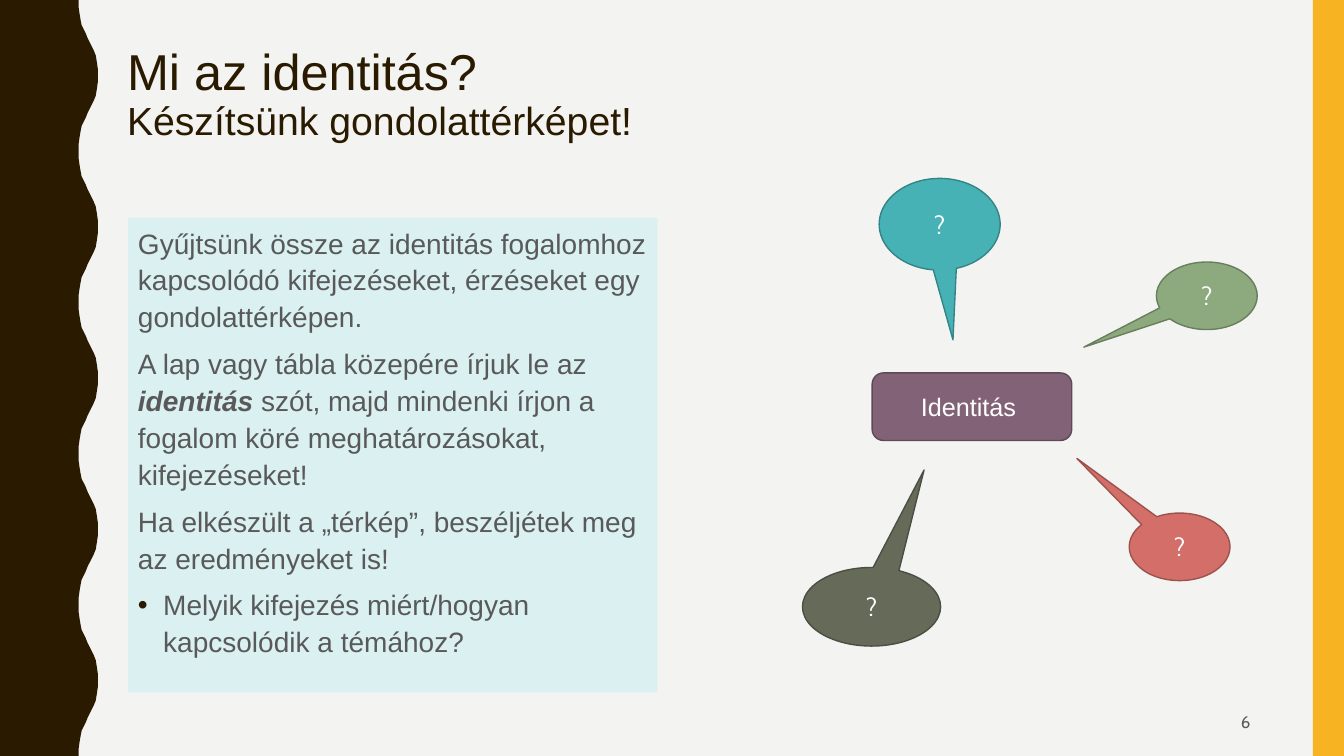
import pptx
import pptx.util
import pptx.dml.color
import pptx.enum.shapes
import pptx.enum.text
import pptx.oxml
import pptx.oxml.ns

PX = 9144
DARK, GREY, WHITE = "2A1A00", "595959", "FFFFFF"
MSO = pptx.enum.shapes.MSO_SHAPE
ALIGN = pptx.enum.text.PP_ALIGN
ANCHOR = pptx.enum.text.MSO_ANCHOR
WAVE_HALF = [(78, 0), (78, 7), (79, 14), (80, 20), (81, 25), (83, 29), (85, 33),
             (87, 38), (89, 42), (91, 46), (93, 50), (95, 55), (96, 61), (97, 68)]
CALLOUTS = [
    ((872, 177, 120, 91), (0.11, 1.26), "46B2B5", "348486"),
    ((1147, 260, 100, 67), (-1.22, 0.76), "8CAA7E", "687E5D"),
    ((796, 563, 137, 78), (0.38, -1.74), "656A59", "4B4E42"),
    ((1120, 509, 100, 67), (-1.02, -1.31), "D36F68", "9C524D"),
]
TASKS = [
    [("Gyűjtsünk össze az identitás fogalomhoz kapcsolódó kifejezéseket, "
      "érzéseket egy gondolattérképen.", False)],
    [("A lap vagy tábla közepére írjuk le az ", False), ("identitás", True),
     (" szót, majd mindenki írjon a fogalom köré meghatározásokat, kifejezéseket!", False)],
    [("Ha elkészült a „térkép”, beszéljétek meg az eredményeket is!", False)],
    [("Melyik kifejezés miért/hogyan kapcsolódik a témához?", False)],
]


def rgb(color):
    return pptx.dml.color.RGBColor.from_string(color)


def box(*lengths):
    return [n * PX for n in lengths]


def set_font(font, name, size, color):
    font.name = name
    font.size = pptx.util.Pt(size)
    font.color.rgb = rgb(color)


def paint(sp, fill, line=None):
    sp.shadow.inherit = False
    sp.fill.solid()
    sp.fill.fore_color.rgb = rgb(fill)
    if line:
        sp.line.color.rgb = rgb(line)
        sp.line.width = pptx.util.Pt(1)
    else:
        sp.line.fill.background()


def add_shape(s, kind, place, fill, line=None):
    sp = s.shapes.add_shape(kind, *box(*place))
    paint(sp, fill, line)
    return sp


def write_label(sp, text, name, size, color, align):
    tf = sp.text_frame
    tf.word_wrap = True
    tf.vertical_anchor = ANCHOR.MIDDLE
    p = tf.paragraphs[0]
    p.text = text
    p.alignment = align
    set_font(p.font, name, size, color)


def add_wave(s):
    half_back = [(x, 150 - y) for x, y in reversed(WAVE_HALF[1:])]
    period = WAVE_HALF + [(97, 75)] + half_back
    edge = [(x, y + 150 * i) for i in range(5) for x, y in period]
    builder = s.shapes.build_freeform(0, 0, scale=PX)
    builder.add_line_segments(edge + [(78, 750), (0, 750)], close=True)
    paint(builder.convert_to_shape(), DARK)


def add_title(s):
    sp = s.shapes.title
    sp.left, sp.top, sp.width, sp.height = box(116, 42, 1134, 143)
    tf = sp.text_frame
    tf.auto_size = pptx.enum.text.MSO_AUTO_SIZE.NONE
    tf.vertical_anchor = ANCHOR.TOP
    p = tf.paragraphs[0]
    p.alignment = ALIGN.LEFT
    p.line_spacing = 0.9
    for text, size in [("Mi az identitás? ", 36), ("Készítsünk gondolattérképet!", 28)]:
        if p.runs:
            p.add_line_break()
        r = p.add_run()
        r.text = text
        set_font(r.font, "Arial", size, DARK)


def add_bullet(p):
    pPr = p._p.get_or_add_pPr()
    pPr.set("marL", str(25 * PX))
    pPr.set("indent", str(-25 * PX))
    ns = pptx.oxml.ns.nsdecls("a")
    for xml in (f'<a:buClr {ns}><a:srgbClr val="{DARK}"/></a:buClr>',
                f'<a:buFont {ns} typeface="Arial"/>',
                f'<a:buChar {ns} char="•"/>'):
        pPr.insert_element_before(pptx.oxml.parse_xml(xml), "a:tabLst", "a:defRPr", "a:extLst")


def add_tasks(s):
    tf = add_shape(s, MSO.RECTANGLE, (127, 216, 525, 471), "DAF0F1").text_frame
    tf.word_wrap = True
    tf.vertical_anchor = ANCHOR.TOP
    for i, runs in enumerate(TASKS):
        p = tf.add_paragraph() if i else tf.paragraphs[0]
        p.alignment = ALIGN.LEFT
        p.line_spacing = 1.1
        p.space_before = pptx.util.Pt(7)
        set_font(p.font, "Arial", 20, GREY)
        for text, strong in runs:
            r = p.add_run()
            r.text = text
            if strong:
                r.font.bold = r.font.italic = True
    add_bullet(p)


def add_callout(s, place, tip, fill, line):
    sp = add_shape(s, MSO.OVAL_CALLOUT, place, fill, line)
    sp.adjustments[0], sp.adjustments[1] = tip
    write_label(sp, "?", "Cabin", 18, WHITE, ALIGN.CENTER)


def main():
    prs = pptx.Presentation()
    prs.slide_width = pptx.util.Inches(13.33)
    prs.slide_height = pptx.util.Inches(7.5)
    s = prs.slides.add_slide(prs.slide_layouts[5])
    s.background.fill.solid()
    s.background.fill.fore_color.rgb = rgb("F3F3F2")
    add_wave(s)
    add_shape(s, MSO.RECTANGLE, (1302, 0, 31, 750), "F8B323")
    add_title(s)
    add_tasks(s)
    number = s.shapes.add_textbox(*box(942, 697, 308, 38))
    write_label(number, "6", "Cabin", 12, GREY, ALIGN.RIGHT)
    topic = add_shape(s, MSO.FLOWCHART_ALTERNATE_PROCESS, (865, 370, 198, 67), "826276", "604957")
    write_label(topic, "Identitás ", "Arial", 18, WHITE, ALIGN.CENTER)
    for callout in CALLOUTS:
        add_callout(s, *callout)
    prs.save("out.pptx")


if __name__ == "__main__":
    main()
